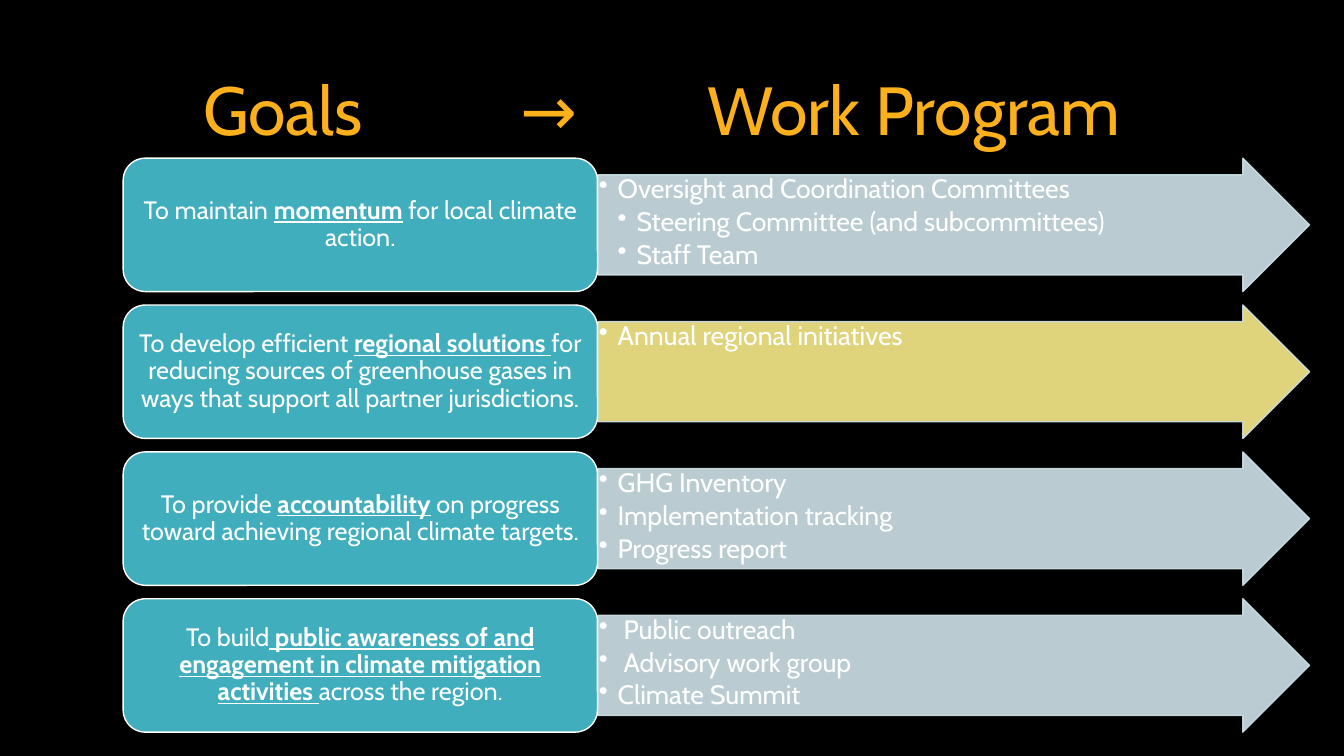
"""Build the slide that links climate goals to the work program."""
import pptx
import pptx.util
import pptx.dml.color
import pptx.enum.shapes
import pptx.enum.text
import pptx.oxml.ns
from lxml import etree

Pt = pptx.util.Pt
qn = pptx.oxml.ns.qn
Kind = pptx.enum.shapes.MSO_SHAPE
Align = pptx.enum.text.PP_ALIGN
Anchor = pptx.enum.text.MSO_ANCHOR


class Theme:
    font = "Cabin"
    back = "000000"
    white = "FFFFFF"
    gold = "FCB11C"
    teal = "41AEBD"
    mist = "CFE3E8"
    straw = "F8EB89"
    head = 48.6
    goal = 18
    item = 19


def write(para, text, size, color=Theme.white, strong=False):
    run = para.add_run()
    run.text = text
    run.font.name = Theme.font
    run.font.size = Pt(size)
    run.font.bold = run.font.underline = strong
    run.font.color.rgb = pptx.dml.color.RGBColor.from_string(color)


def block(kind, left, top, width, height, fill, line, pads):
    shape = slide.shapes.add_shape(kind, Pt(left), Pt(top), Pt(width), Pt(height))
    shape.shadow.inherit = False
    shape.fill.solid()
    shape.fill.fore_color.rgb = pptx.dml.color.RGBColor.from_string(fill)
    shape.line.color.rgb = pptx.dml.color.RGBColor.from_string(line)
    shape.line.width = Pt(1)
    frame = shape.text_frame
    frame.word_wrap = True
    frame.margin_left = frame.margin_right = Pt(pads[0])
    frame.margin_top = frame.margin_bottom = Pt(pads[1])
    return shape


deck = pptx.Presentation()
deck.slide_width, deck.slide_height = Pt(960), Pt(540)
slide = deck.slides.add_slide(deck.slide_layouts[6])
slide.background.fill.solid()
slide.background.fill.fore_color.rgb = pptx.dml.color.RGBColor.from_string(Theme.back)

title = slide.shapes.add_textbox(Pt(66), Pt(29), Pt(828), Pt(104.4)).text_frame
title.word_wrap = True
title.vertical_anchor = Anchor.MIDDLE
para = title.paragraphs[0]
stops = etree.SubElement(para._p.get_or_add_pPr(), qn("a:tabLst"))
for stop in (72, 288, 432):
    etree.SubElement(stops, qn("a:tab"), pos=str(Pt(stop)), algn="l")
para.line_spacing = 0.9
write(para, "\tGoals \t → \tWork Program", size=Theme.head, color=Theme.gold)

rows = [
    (("To maintain ", "momentum", " for local climate action."), Theme.mist,
     [(1, "Oversight and Coordination Committees"),
      (2, "Steering Committee (and subcommittees)"),
      (2, "Staff Team")]),
    (("To develop efficient ", "regional solutions ",
      "for reducing sources of greenhouse gases in ways that support all partner jurisdictions."),
     Theme.straw,
     [(1, "Annual regional initiatives")]),
    (("To provide ", "accountability",
      " on progress toward achieving regional climate targets."), Theme.mist,
     [(1, "GHG Inventory"), (1, "Implementation tracking"), (1, "Progress report")]),
    (("To build", " public awareness of and engagement in climate mitigation activities ",
      "across the region."), Theme.mist,
     [(1, " Public outreach"), (1, " Advisory work group"), (1, "Climate Summit")]),
]
first, pitch, high, dent = 113, 104.9, 95.3, 13.5

for row, (goal, fill, items) in enumerate(rows):
    top = first + row * pitch

    arrow = block(Kind.RIGHT_ARROW, 427, top, 508.4, high, fill, Theme.mist, (0.7, 0.7))
    arrow.adjustments[0], arrow.adjustments[1] = 0.75, 0.5
    for color in arrow._element.spPr.iter(qn("a:srgbClr")):
        etree.SubElement(color, qn("a:alpha"), val="90000")
    frame = arrow.text_frame
    frame.vertical_anchor = Anchor.TOP
    for place, (level, text) in enumerate(items):
        para = frame.add_paragraph() if place else frame.paragraphs[0]
        props = para._p.get_or_add_pPr()
        props.set("marL", str(Pt(dent * level)))
        props.set("indent", str(-Pt(dent)))
        etree.SubElement(props, qn("a:buChar"), char="•")
        para.level = level
        para.alignment = Align.LEFT
        para.line_spacing = 0.9
        para.space_after = Pt(2.85)
        write(para, text, size=Theme.item)

    card = block(Kind.ROUNDED_RECTANGLE, 88, top, 338.8, high, Theme.teal, Theme.white, (5, 2.7))
    card.text_frame.vertical_anchor = Anchor.MIDDLE
    para = card.text_frame.paragraphs[0]
    para.alignment = Align.CENTER
    para.line_spacing = 0.9
    for part, text in enumerate(goal):
        write(para, text, size=Theme.goal, strong=part == 1)

deck.save("out.pptx")
